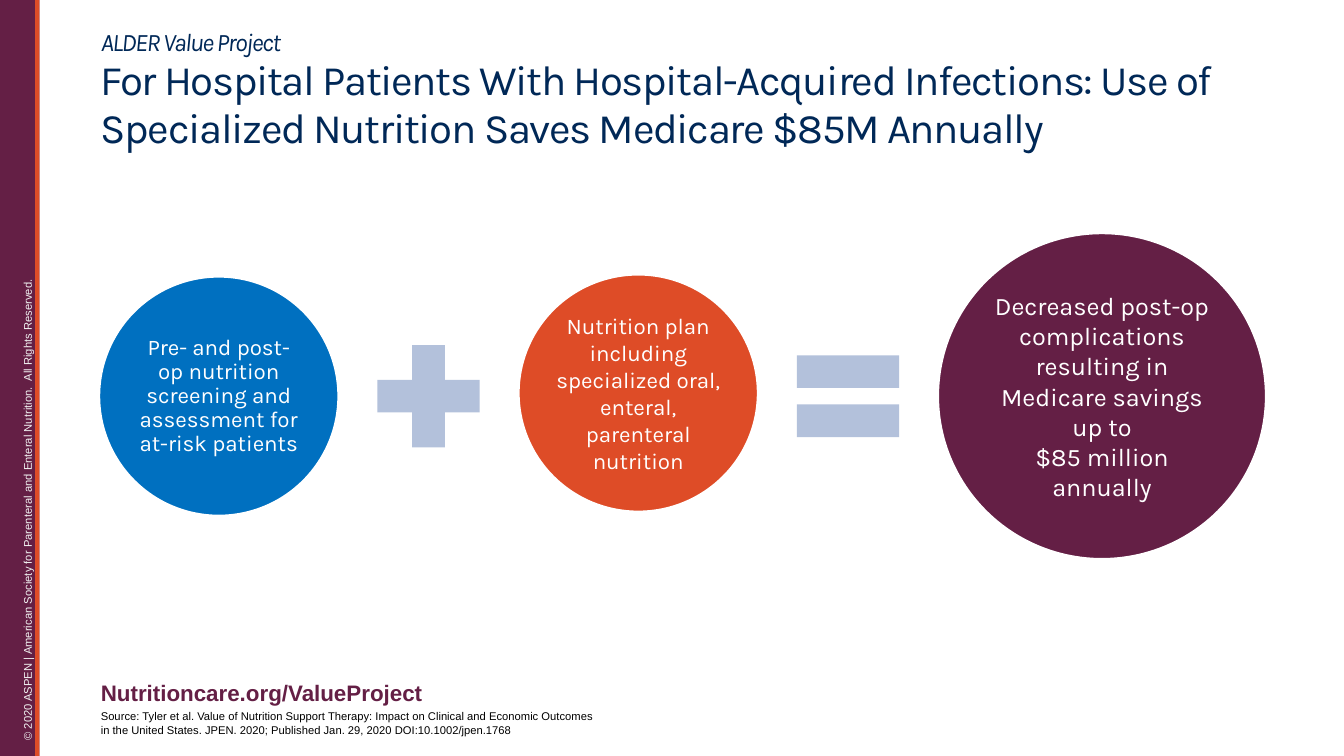
import pptx
import pptx.util
import pptx.dml.color
import pptx.enum.shapes
import pptx.enum.text
from dataclasses import dataclass

Inches, Pt = pptx.util.Inches, pptx.util.Pt
SHAPE = pptx.enum.shapes.MSO_SHAPE
ALIGN = pptx.enum.text.PP_ALIGN
ANCHOR = pptx.enum.text.MSO_ANCHOR


@dataclass(frozen=True)
class Theme:
    heading_font: str = "Karla"
    body_font: str = "Arial"
    plum: str = "641F45"
    orange: str = "DE4C27"
    blue: str = "0070C0"
    operator: str = "B3C1DB"
    navy: str = "002857"
    white: str = "FFFFFF"
    pale: str = "F2F2F2"
    black: str = "000000"
    title: int = 30
    large: int = 18
    medium: int = 16
    small: int = 8


THEME = Theme()

KICKER = "ALDER Value Project"
TITLE = ("For Hospital Patients With Hospital-Acquired Infections: "
         "Use of Specialized Nutrition Saves Medicare $85M Annually")
COPYRIGHT = ("© 2020 ASPEN | American Society for Parenteral and Enteral "
             "Nutrition.  All Rights Reserved.")
WEBSITE = "Nutritioncare.org/ValueProject"
SOURCE = ("Source: Tyler et al. Value of Nutrition Support Therapy: Impact on Clinical "
          "and Economic Outcomes in the United States. JPEN. 2020; "
          "Published Jan. 29, 2020 DOI:10.1002/jpen.1768")

# preset, width, height, centre height, fill, text lines, type size, line spacing, margin
EQUATION = [
    (SHAPE.OVAL, 2.38, 2.38, 3.93, THEME.blue,
     ["Pre- and post-op nutrition screening and assessment for at-risk patients"],
     THEME.medium, 0.9, 0.02),
    (SHAPE.MATH_PLUS, 1.38, 1.38, 3.93, THEME.operator, [], None, None, None),
    (SHAPE.OVAL, 2.38, 2.36, 3.9, THEME.orange,
     ["Nutrition plan including specialized oral, enteral, parenteral nutrition"],
     THEME.medium, 1.0, 0.02),
    (SHAPE.MATH_EQUAL, 1.38, 1.38, 3.93, THEME.operator, [], None, None, None),
    (SHAPE.OVAL, 3.26, 3.24, 3.93, THEME.plum,
     ["Decreased post-op complications resulting in Medicare savings up to",
      "$85 million annually"],
     THEME.large, 1.0, 0.03),
]
EQUATION_LEFT, EQUATION_GAP = 0.98, 0.2


def rgb(value):
    return pptx.dml.color.RGBColor.from_string(value)


def add_span(para, text, size, color, font, bold=False, italic=False, tracking=None):
    span = para.add_run()
    span.text = text
    span.font.name, span.font.size = font, Pt(size)
    span.font.bold, span.font.italic = bold, italic
    span.font.color.rgb = rgb(color)
    if tracking is not None:
        span.font._element.set("spc", str(tracking * 100))


def set_frame(frame, margin, anchor):
    frame.word_wrap = True
    frame.vertical_anchor = anchor
    frame.margin_left = frame.margin_right = Inches(margin)
    frame.margin_top = frame.margin_bottom = Inches(margin)


def add_filled(page, preset, left, top, width, height, fill):
    shape = page.shapes.add_shape(
        preset, Inches(left), Inches(top), Inches(width), Inches(height))
    shape.shadow.inherit = False
    shape.fill.solid()
    shape.fill.fore_color.rgb = rgb(fill)
    shape.line.fill.background()
    return shape


def add_text_box(page, left, top, width, height, margin=0, anchor=ANCHOR.TOP):
    box = page.shapes.add_textbox(
        Inches(left), Inches(top), Inches(width), Inches(height))
    set_frame(box.text_frame, margin, anchor)
    return box


def add_side_band(page):
    add_filled(page, SHAPE.RECTANGLE, 0, 0, 0.39, 7.5, THEME.plum)
    box = add_text_box(page, -2.92, 4.13, 6.39, 0.24, margin=0.05)
    box.text_frame.margin_left = box.text_frame.margin_right = Inches(0.1)
    box.rotation = 270
    add_span(box.text_frame.paragraphs[0], COPYRIGHT, THEME.small, THEME.pale,
             THEME.body_font)
    add_filled(page, SHAPE.RECTANGLE, 0.35, 0, 0.04, 7.5, THEME.orange)


def add_equation(page):
    left = EQUATION_LEFT
    for preset, width, height, middle, fill, lines, size, spacing, margin in EQUATION:
        shape = add_filled(page, preset, left, middle - height / 2, width, height, fill)
        left += width + EQUATION_GAP
        if not lines:
            continue
        shape.line.color.rgb = rgb(THEME.white)
        shape.line.width = Pt(2)
        set_frame(shape.text_frame, margin, ANCHOR.MIDDLE)
        para = shape.text_frame.paragraphs[0]
        para.alignment = ALIGN.CENTER
        para.line_spacing = spacing
        for number, line in enumerate(lines):
            if number:
                para.add_line_break()
            add_span(para, line, size, THEME.white, THEME.heading_font)


def add_title(page):
    box = add_text_box(page, 1, 0.13, 11.33, 1.54, anchor=ANCHOR.MIDDLE)
    para = box.text_frame.paragraphs[0]
    para.line_spacing = 0.95
    add_span(para, KICKER, THEME.large, THEME.navy, THEME.heading_font,
             italic=True, tracking=-1)
    para.add_line_break()
    add_span(para, TITLE, THEME.title, THEME.navy, THEME.heading_font, tracking=-1)


def add_footer(page):
    source = add_text_box(page, 1, 7.04, 4.9, 0.27)
    add_span(source.text_frame.paragraphs[0], SOURCE, THEME.small, THEME.black,
             THEME.body_font)
    website = add_text_box(page, 1, 6.74, 4.45, 0.27)
    add_span(website.text_frame.paragraphs[0], WEBSITE, THEME.medium, THEME.plum,
             THEME.body_font, bold=True)


def main():
    deck = pptx.Presentation()
    deck.slide_width, deck.slide_height = Inches(13.33), Inches(7.5)
    page = deck.slides.add_slide(deck.slide_layouts[6])
    add_side_band(page)
    add_equation(page)
    add_title(page)
    add_footer(page)
    deck.save("out.pptx")


if __name__ == "__main__":
    main()
